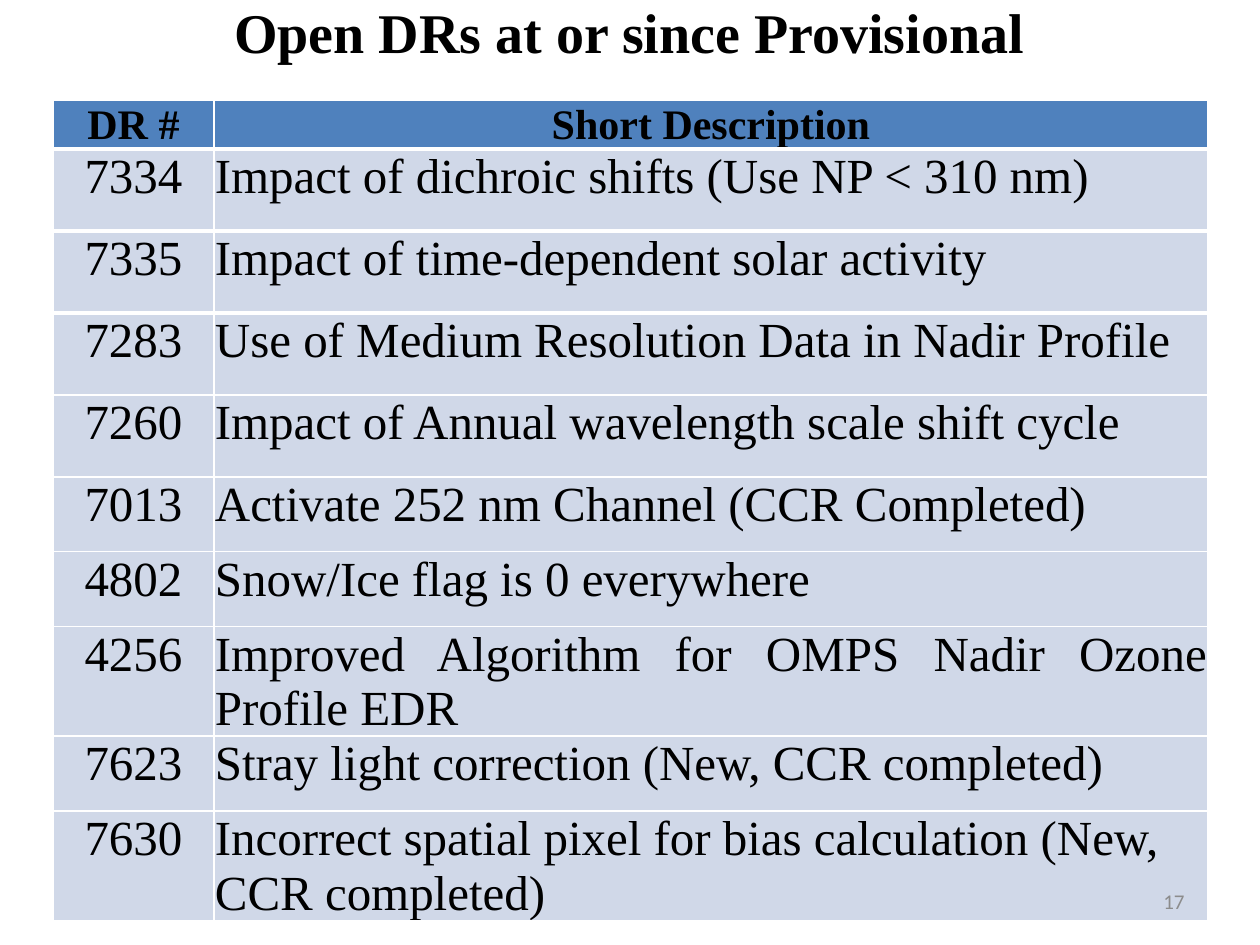
import pptx
import pptx.dml.color
import pptx.enum.text
import pptx.oxml.ns
import pptx.util
from lxml import etree

PX = 914400 // 126
SERIF = "Times New Roman"
ALIGN = pptx.enum.text.PP_ALIGN
ANCHOR = pptx.enum.text.MSO_ANCHOR


def add_text(frame, text, size, font, color, align, bold=False):
    para = frame.paragraphs[0]
    para.alignment = align
    span = para.add_run()
    span.text = text
    span.font.size = pptx.util.Pt(size)
    span.font.name = font
    span.font.bold = bold
    span.font.color.rgb = pptx.dml.color.RGBColor.from_string(color)


def add_border(cell, side, points):
    """Add a white line; call in the order L, R, T, B and before the fill."""
    qn = pptx.oxml.ns.qn
    line = etree.SubElement(cell._tc.get_or_add_tcPr(), qn(f"a:ln{side}"),
                            w=str(pptx.util.Pt(points)))
    fill = etree.SubElement(line, qn("a:solidFill"))
    etree.SubElement(fill, qn("a:srgbClr"), val="FFFFFF")


deck = pptx.Presentation()
deck.slide_width = 1260 * PX
deck.slide_height = 945 * PX
page = deck.slides.add_slide(deck.slide_layouts[6])

# Row height in px, DR number, description
rows = [
    (49, "DR #", "Short Description"),
    (82, "7334", "Impact of dichroic shifts (Use NP < 310 nm)"),
    (82, "7335", "Impact of time-dependent solar activity"),
    (82, "7283", "Use of Medium Resolution Data in Nadir Profile"),
    (82, "7260", "Impact of Annual wavelength scale shift cycle"),
    (75, "7013", "Activate 252 nm Channel (CCR Completed)"),
    (75, "4802", "Snow/Ice flag is 0 everywhere"),
    (73, "4256", "Improved Algorithm for OMPS Nadir Ozone Profile EDR"),
    (75, "7623", "Stray light correction (New, CCR completed)"),
    (75, "7630", "Incorrect spatial pixel for bias calculation (New, CCR completed)"),
]
thick_rules = 3  # the lines under the header and the first two DRs
last = len(rows) - 1

table = page.shapes.add_table(len(rows), 2, 53 * PX, 100 * PX,
                              1155 * PX, 840 * PX).table
table.horz_banding = False
table.columns[0].width = 161 * PX
table.columns[1].width = 994 * PX

for r, (height, *texts) in enumerate(rows):
    table.rows[r].height = height * PX
    header = r == 0
    for c, text in enumerate(texts):
        cell = table.cell(r, c)
        cell.margin_left = cell.margin_right = cell.margin_top = PX
        cell.margin_bottom = 0
        cell.vertical_anchor = ANCHOR.BOTTOM if header else ANCHOR.TOP
        add_border(cell, "L", 1)
        add_border(cell, "R", 1)
        add_border(cell, "T", 3 if 1 <= r <= thick_rules else 1)
        add_border(cell, "B", 3 if r < thick_rules else 1)
        cell.fill.solid()
        cell.fill.fore_color.rgb = pptx.dml.color.RGBColor.from_string(
            "4F81BD" if header else "D0D8E8")
        if header or c == 0:
            align = ALIGN.CENTER
        else:
            align = ALIGN.LEFT if r == last else ALIGN.JUSTIFY
        add_text(cell.text_frame, text, 24 if header else 28, SERIF,
                 "000000", align, bold=header)

title = page.shapes.add_textbox(218 * PX, -9 * PX, 823 * PX, 81 * PX)
title.text_frame.word_wrap = False
title.text_frame.auto_size = pptx.enum.text.MSO_AUTO_SIZE.SHAPE_TO_FIT_TEXT
title.text_frame.vertical_anchor = ANCHOR.MIDDLE
add_text(title.text_frame, "Open DRs at or since Provisional", 32, SERIF,
         "000000", ALIGN.CENTER, bold=True)

number = page.shapes.add_textbox(903 * PX, 876 * PX, 294 * PX, 50 * PX)
number.text_frame.word_wrap = True
number.text_frame.vertical_anchor = ANCHOR.MIDDLE
add_text(number.text_frame, "17", 12, "Calibri", "8C8C8C", ALIGN.RIGHT)

deck.save("out.pptx")
